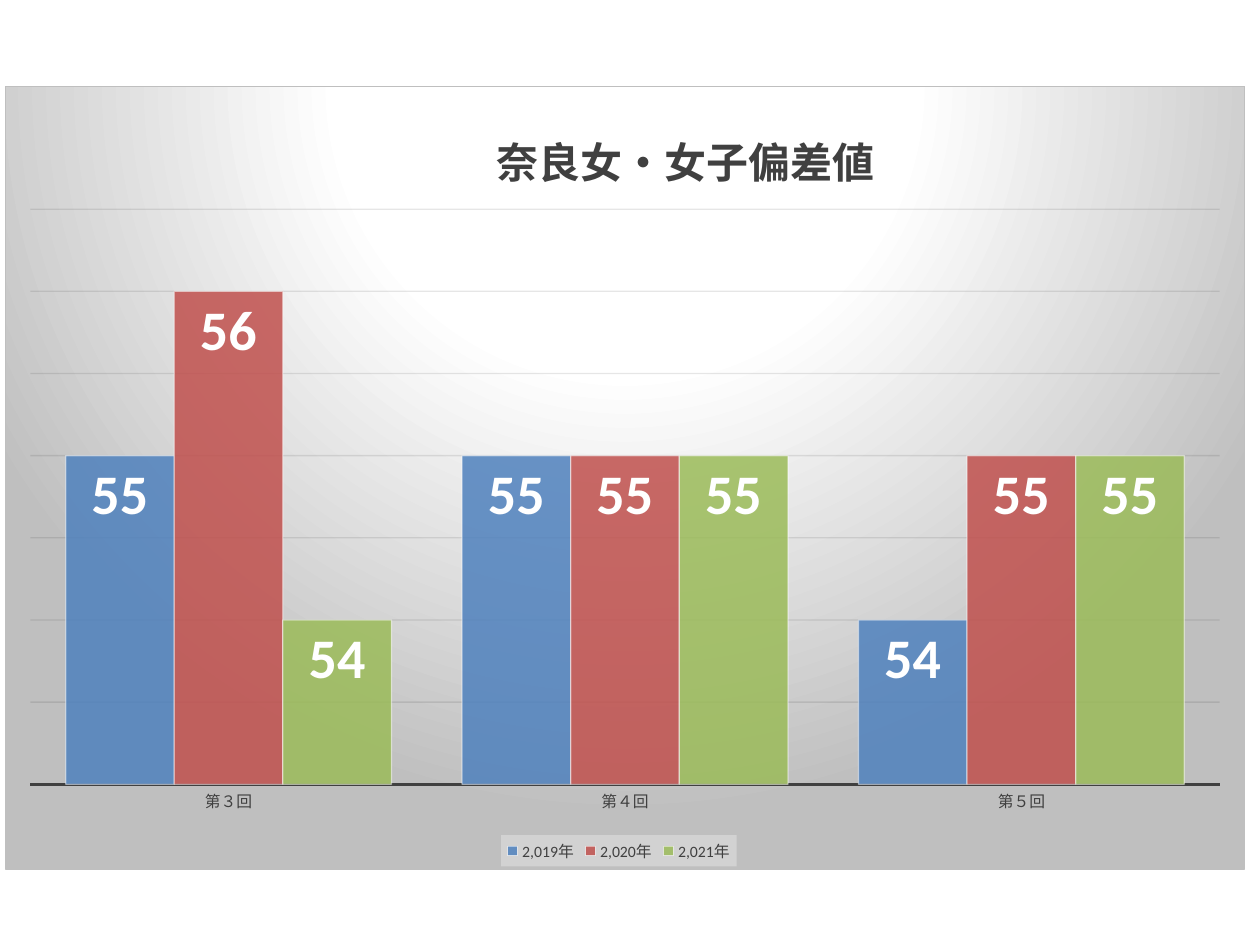
from lxml import etree
from pptx import Presentation
from pptx.chart.data import CategoryChartData
from pptx.dml.color import RGBColor
from pptx.enum.chart import (XL_CHART_TYPE, XL_LABEL_POSITION,
                             XL_LEGEND_POSITION, XL_TICK_MARK)
from pptx.oxml import parse_xml
from pptx.oxml.ns import nsdecls, qn
from pptx.util import Cm, Pt

COLUMNS = XL_CHART_TYPE.COLUMN_CLUSTERED
INSIDE_END = XL_LABEL_POSITION.INSIDE_END
BOTTOM = XL_LEGEND_POSITION.BOTTOM
NO_TICK = XL_TICK_MARK.NONE

FONT = "Calibri"
DARK, GREY, WHITE = "404040", "BFBFBF", "FFFFFF"
TITLE = "奈良女・女子偏差値"
ROUNDS = ["第３回", "第４回", "第５回"]
YEARS = [
    ("2,019年", (55, 55, 54), "4F81BD"),
    ("2,020年", (56, 55, 55), "C0504D"),
    ("2,021年", (54, 55, 55), "9BBB59"),
]


def rgb(value):
    return RGBColor.from_string(value)


def set_font(font, size, color, bold=False):
    font.name, font.size, font.bold = FONT, Pt(size), bold
    font.color.rgb = rgb(color)


def set_alpha(parent, percent):
    """Make the solid colour inside a shape or line properties element see-through."""
    color = parent.find(qn("a:solidFill")).find(qn("a:srgbClr"))
    etree.SubElement(color, qn("a:alpha")).set("val", str(percent * 1000))


def style_line(line, color, width, alpha=None):
    line.color.rgb = rgb(color)
    line.width = Pt(width)
    if alpha is not None:
        set_alpha(line._get_or_add_ln(), alpha)


def place(element, index, x, y, w=None, h=None, inner=False):
    """Place a chart part by fractions of the chart area."""
    for old in element.findall(qn("c:layout")):
        element.remove(old)
    target = '<c:layoutTarget val="inner"/>' if inner else ""
    modes = '<c:xMode val="edge"/><c:yMode val="edge"/>'
    sizes = zip("xywh", (x, y, w, h))
    values = "".join(f'<c:{k} val="{v}"/>' for k, v in sizes if v is not None)
    element.insert(index, parse_xml(
        f'<c:layout {nsdecls("c")}><c:manualLayout>{target}{modes}{values}'
        '</c:manualLayout></c:layout>'))


def style_background(chart):
    stops = "".join(f'<a:gs pos="{pos * 1000}"><a:srgbClr val="{color}"/></a:gs>'
                    for pos, color in ((0, WHITE), (39, WHITE), (100, GREY)))
    chart.element.find(qn("c:chart")).addnext(parse_xml(
        f'<c:spPr {nsdecls("c", "a")}><a:gradFill><a:gsLst>{stops}</a:gsLst>'
        '<a:path path="circle">'
        '<a:fillToRect l="50000" t="-80000" r="50000" b="180000"/></a:path>'
        f'</a:gradFill><a:ln w="{Pt(0.75)}"><a:solidFill><a:srgbClr val="{GREY}"/>'
        '</a:solidFill></a:ln></c:spPr>'))


def style_title(chart):
    tf = chart.chart_title.text_frame
    tf.text = TITLE
    set_font(tf.paragraphs[0].runs[0].font, 24, DARK, True)
    place(chart.chart_title._element, 1, 0.39, 0.04)


def style_axes(chart):
    cat = chart.category_axis
    cat.major_tick_mark = NO_TICK
    set_font(cat.tick_labels.font, 9, DARK)
    style_line(cat.format.line, DARK, 1.5)
    val = chart.value_axis
    val.minimum_scale, val.maximum_scale, val.major_unit = 53, 56.5, 0.5
    val.has_major_gridlines = True
    style_line(val.major_gridlines.format.line, "0D0D0D", 0.75, 10)
    val.visible = False


def style_legend(chart):
    chart.has_legend = True
    legend = chart.legend
    legend.position = BOTTOM
    legend.include_in_layout = False
    set_font(legend.font, 9, DARK)
    element = legend._element
    place(element, 1, 0.4, 0.96, 0.19, 0.04)
    element.find(qn("c:overlay")).addnext(parse_xml(
        f'<c:spPr {nsdecls("c", "a")}><a:solidFill><a:srgbClr val="F2F2F2">'
        '<a:alpha val="39000"/></a:srgbClr></a:solidFill></c:spPr>'))


def style_series(series, color):
    fill = series.format.fill
    fill.solid()
    fill.fore_color.rgb = rgb(color)
    set_alpha(series._element.find(qn("c:spPr")), 85)
    style_line(series.format.line, WHITE, 0.75, 50)
    labels = series.data_labels
    labels.show_value = True
    labels.position = INSIDE_END
    set_font(labels.font, 32, WHITE, True)


def add_score_chart(s):
    data = CategoryChartData(number_format="0")
    data.categories = ROUNDS
    for name, scores, _ in YEARS:
        data.add_series(name, scores)
    chart = s.shapes.add_chart(COLUMNS, Cm(0.1), Cm(1.73), Cm(25), Cm(15.8),
                               data).chart
    set_font(chart.font, 10, "000000")
    style_background(chart)
    style_title(chart)
    style_axes(chart)
    style_legend(chart)
    plot = chart.plots[0]
    plot.gap_width, plot.overlap, plot.vary_by_categories = 65, 0, False
    for series, (_, _, color) in zip(plot.series, YEARS):
        style_series(series, color)
    plot_area = chart.element.find(qn("c:chart")).find(qn("c:plotArea"))
    place(plot_area, 0, 0.02, 0.157, 0.96, 0.735, inner=True)


def main():
    prs = Presentation()
    prs.slide_width, prs.slide_height = Cm(25.4), Cm(19.05)
    # The heading belongs to the chart, so the slide itself is blank
    s = prs.slides.add_slide(prs.slide_layouts[6])
    add_score_chart(s)
    prs.save("out.pptx")


if __name__ == "__main__":
    main()
